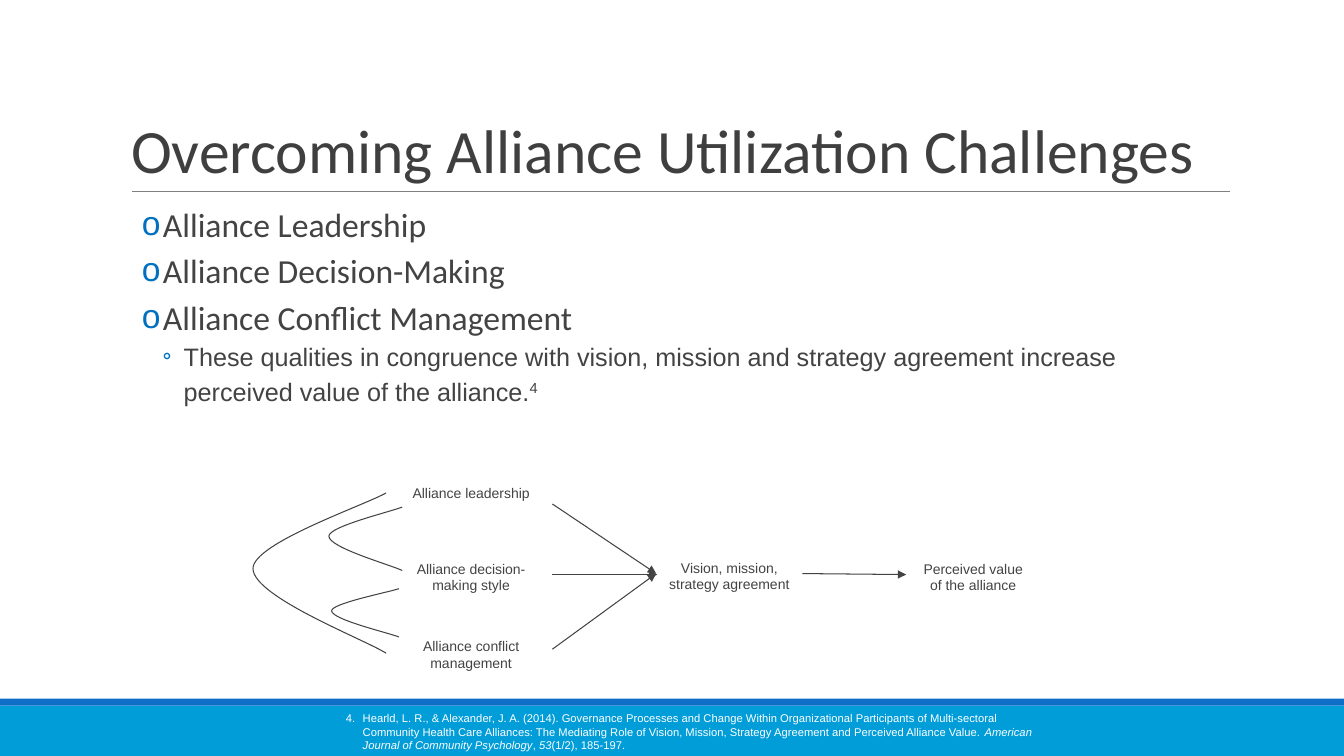
from lxml import etree
from pptx import Presentation
from pptx import util as u
from pptx.dml.color import RGBColor
from pptx.enum import shapes, text
from pptx.oxml import ns

Pt = u.Pt
INK = "434343"
BULLET_BLUE = "0070C0"
POINTS = ["Alliance Leadership", "Alliance Decision-Making", "Alliance Conflict Management"]
SUBPOINT = ("These qualities in congruence with vision, mission and strategy "
            "agreement increase perceived value of the alliance.")
CITATION = [
    ("4.\tHearld, L. R., & Alexander, J. A. (2014). Governance Processes and Change Within "
     "Organizational Participants of Multi-sectoral Community Health Care Alliances: "
     "The Mediating Role of Vision, Mission, Strategy Agreement and Perceived Alliance Value. ", False),
    ("American Journal of Community Psychology", True),
    (", ", False),
    ("53", True),
    ("(1/2), 185-197.", False),
]
LABELS = [
    ("Alliance leadership", 97, 1.2, 119),
    ("Alliance decision-making style", 97, 53.8, 119),
    ("Alliance conflict management", 97, 109.2, 119),
    ("Vision, mission, strategy agreement", 288.7, 53.2, 104.4),
    ("Perceived value of the alliance", 467.6, 53.8, 95),
]
ARROWS = [
    (214.6, 21, 288.7, 70.7),
    (214.6, 71.4, 289.4, 71.4),
    (214.6, 124.7, 288.7, 70.7),
    (393.1, 70.7, 467.3, 71.4),
]
ARCS = [
    (95.8, 0.7, 13.1, 67.1, 127.6),
    (107.3, 54.9, 23.2, 44, 68.5),
    (105.1, 56.9, 81.5, 97.3, 116),
]


def color(value):
    return RGBColor.from_string(value)


def add_element(parent, tag, **attributes):
    return etree.SubElement(parent, ns.qn(tag), attributes)


def style_run(run, size, fill, name="Arial", italic=False):
    run.font.size = Pt(size)
    run.font.name = name
    run.font.italic = italic
    run.font.color.rgb = color(fill)


def add_text_frame(slide, left, top, width, height, inset_x=7.2, inset_y=7.2):
    shape = slide.shapes.add_textbox(Pt(left), Pt(top), Pt(width), Pt(height))
    frame = shape.text_frame
    frame.word_wrap = True
    frame.margin_left = frame.margin_right = Pt(inset_x)
    frame.margin_top = frame.margin_bottom = Pt(inset_y)
    return frame


def indent(paragraph, margin, hanging):
    properties = paragraph._p.get_or_add_pPr()
    properties.set("marL", str(Pt(margin)))
    properties.set("indent", str(-Pt(hanging)))
    return properties


def add_bullet(paragraph, character, margin, typeface):
    properties = indent(paragraph, margin, 15)
    bullet_color = add_element(properties, "a:buClr")
    add_element(bullet_color, "a:srgbClr", val=BULLET_BLUE)
    add_element(properties, "a:buFont", typeface=typeface)
    add_element(properties, "a:buChar", char=character)


def add_line(slide, x1, y1, x2, y2, stroke, arrow=False):
    line = slide.shapes.add_connector(
        shapes.MSO_CONNECTOR.STRAIGHT, Pt(x1), Pt(y1), Pt(x2), Pt(y2))
    line.line.color.rgb = color(stroke)
    line.line.width = Pt(0.75)
    if arrow:
        add_element(line.line._get_or_add_ln(), "a:tailEnd", type="triangle")
    add_element(line._element.spPr, "a:effectLst")


def add_title(slide, left, top, width, height):
    title = slide.shapes.title
    title.left, title.top, title.width, title.height = Pt(left), Pt(top), Pt(width), Pt(height)
    frame = title.text_frame
    frame.text = "Overcoming Alliance Utilization Challenges"
    frame.auto_size = text.MSO_AUTO_SIZE.NONE
    frame.vertical_anchor = text.MSO_ANCHOR.BOTTOM
    paragraph = frame.paragraphs[0]
    paragraph.alignment = text.PP_ALIGN.LEFT
    paragraph.line_spacing = 0.85
    style_run(paragraph.runs[0], 44, "3F3F3F", "Calibri")
    add_line(slide, left + 7.9, top + height, left + width + 0.3, top + height, "7F7F7F")


def add_points(slide, left, top, width, height):
    frame = add_text_frame(slide, left, top, width, height, 0, 3.6)
    frame.text = "\n".join(POINTS + [SUBPOINT])
    *main_points, subpoint = frame.paragraphs
    for paragraph in main_points:
        paragraph.line_spacing = 1.15
        add_bullet(paragraph, "o", 30, "Arial")
        style_run(paragraph.runs[0], 24, INK, "Calibri")
    subpoint.level = 1
    subpoint.line_spacing = 1.15
    add_bullet(subpoint, "◦", 44.8, "Calibri")
    marker = subpoint.add_run()
    marker.text = "4"
    for run in subpoint.runs:
        style_run(run, 18, INK)
    marker.font._element.set("baseline", "30000")


def add_arc(slide, right, left, top, middle, bottom):
    shoulder = right - (right - left) / 6
    points = [
        (right, top),
        (shoulder, top + (middle - top) / 6),
        (left, middle - (middle - top) / 3),
        (left, middle),
        (left, middle + (bottom - middle) / 3),
        (shoulder, bottom - (bottom - middle) / 6),
        (right, bottom),
    ]
    start, *rest = [(Pt(x), Pt(y)) for x, y in points]
    builder = slide.shapes.build_freeform(*start)
    builder.add_line_segments(rest, close=False)
    arc = builder.convert_to_shape()
    segments = list(arc._element.iter(ns.qn("a:lnTo")))
    outline = segments[0].getparent()
    for first in range(0, len(segments), 3):
        curve = add_element(outline, "a:cubicBezTo")
        for segment in segments[first:first + 3]:
            curve.append(segment[0])
            outline.remove(segment)
    arc.shadow.inherit = False
    arc.fill.background()
    arc.line.color.rgb = color(INK)
    arc.line.width = Pt(0.75)


def add_diagram(slide, left, top):
    for right, peak, start, middle, end in ARCS:
        add_arc(slide, left + right, left + peak, top + start, top + middle, top + end)
    for x1, y1, x2, y2 in ARROWS:
        add_line(slide, left + x1, top + y1, left + x2, top + y2, INK, arrow=True)
    for label, x, y, width in LABELS:
        frame = add_text_frame(slide, left + x, top + y, width, 35)
        frame.text = label
        paragraph = frame.paragraphs[0]
        paragraph.alignment = text.PP_ALIGN.CENTER
        style_run(paragraph.runs[0], 10, INK)


def add_footer(slide, left, top, width, height):
    for offset, depth, fill in [(5, height - 5, "009DD9"), (0, 5, "0F6FC6")]:
        band = slide.shapes.add_shape(
            shapes.MSO_SHAPE.RECTANGLE, Pt(left), Pt(top + offset), Pt(width), Pt(depth))
        band.shadow.inherit = False
        band.fill.solid()
        band.fill.fore_color.rgb = color(fill)
        band.line.fill.background()
    frame = add_text_frame(slide, left + 240, top + 2, 512, 29)
    paragraph = frame.paragraphs[0]
    indent(paragraph, 12, 12)
    for content, italic in CITATION:
        run = paragraph.add_run()
        run.text = content
        style_run(run, 8, "FFFFFF", italic=italic)


def main():
    presentation = Presentation()
    presentation.slide_width, presentation.slide_height = Pt(960), Pt(540)
    slide = presentation.slides.add_slide(presentation.slide_layouts[5])
    add_footer(slide, 0, 499, 960, 41)
    add_title(slide, 86.4, 22.3, 792, 114.5)
    add_points(slide, 86.4, 137.7, 780, 160)
    add_diagram(slide, 180, 339)
    presentation.save("out.pptx")


if __name__ == "__main__":
    main()
